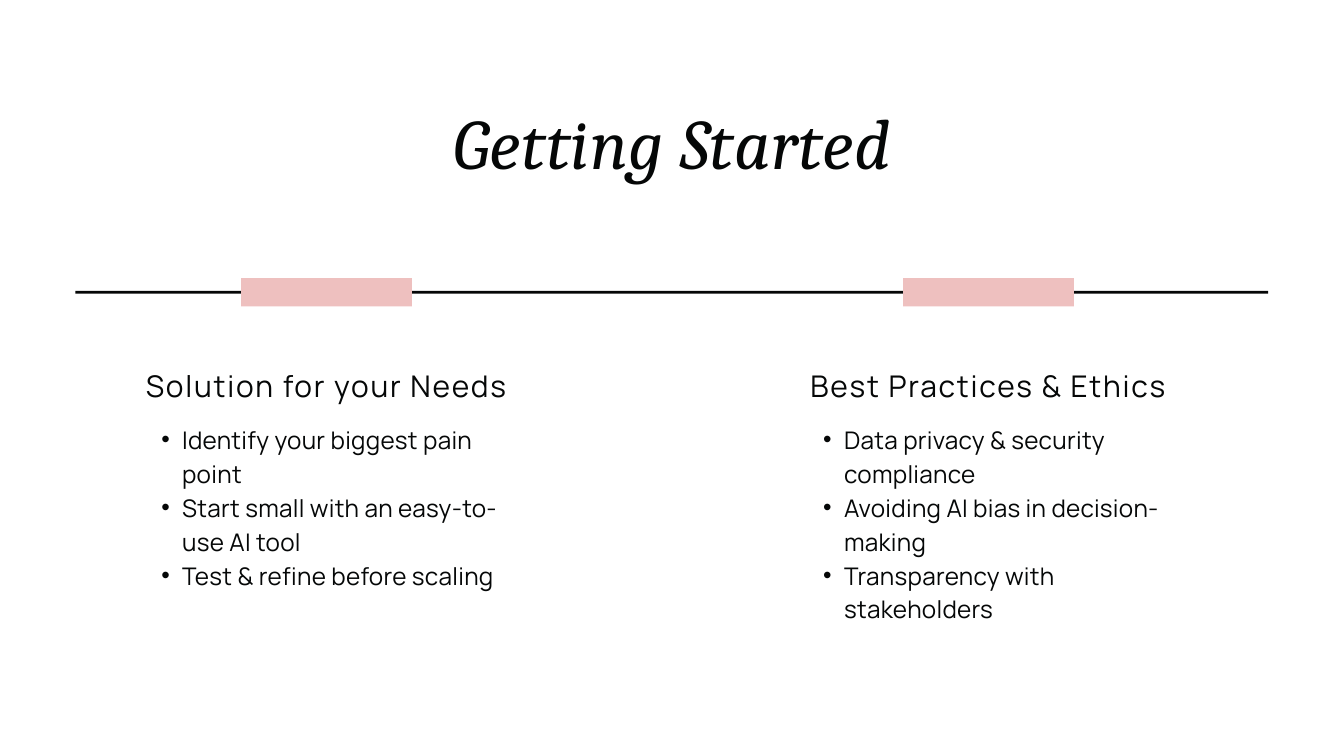
from lxml import etree
from pptx import Presentation
from pptx.dml.color import RGBColor
from pptx.enum.shapes import MSO_SHAPE
from pptx.enum.text import MSO_ANCHOR, MSO_AUTO_SIZE, PP_ALIGN
from pptx.oxml.ns import qn
from pptx.util import Pt

RECTANGLE = MSO_SHAPE.RECTANGLE
TOP = MSO_ANCHOR.TOP
NO_FIT = MSO_AUTO_SIZE.NONE
LEFT, CENTER = PP_ALIGN.LEFT, PP_ALIGN.CENTER

PX = 9144  # 100 px to the inch
INK, PINK = "050707", "EEC0BF"
COMPARISON_LAYOUT = 5 - 1


def add_bar(left, top, width, height, color):
    bar = page.shapes.add_shape(RECTANGLE, left * PX, top * PX, width * PX, height * PX)
    bar.shadow.inherit = False
    bar.fill.solid()
    bar.fill.fore_color.rgb = RGBColor.from_string(color)
    bar.line.fill.background()


def fill_text(box, place, lines, font, size, leading, tracking, italic=False, bullets=False):
    box.left, box.top, box.width, box.height = [length * PX for length in place]
    frame = box.text_frame
    frame.margin_left = frame.margin_top = frame.margin_right = frame.margin_bottom = 0
    frame.word_wrap = True
    frame.auto_size = NO_FIT
    frame.vertical_anchor = TOP
    for number, line in enumerate(lines):
        para = frame.add_paragraph() if number else frame.paragraphs[0]
        para.alignment = LEFT if bullets else CENTER
        para.line_spacing = Pt(leading)
        para.space_before = Pt(0)
        if bullets:
            para.level = 1
            props = para._p.get_or_add_pPr()
            props.set("marL", str(61 * PX))
            props.set("indent", str(-31 * PX))
            etree.SubElement(props, qn("a:buFont")).set("typeface", "Arial")
            etree.SubElement(props, qn("a:buChar")).set("char", "•")
        para.font.name = font
        para.font.size = Pt(size)
        para.font.bold = False
        para.font.italic = italic
        para.font.color.rgb = RGBColor.from_string(INK)
        span = para.add_run()
        span.text = line
        span._r.get_or_add_rPr().set("spc", str(tracking))


deck = Presentation()
deck.slide_width, deck.slide_height = 2000 * PX, 1125 * PX
page = deck.slides.add_slide(deck.slide_layouts[COMPARISON_LAYOUT])

# Title
fill_text(page.shapes.title, (229, 146, 1543, 126), ["Getting Started"],
          "Cambria", 76, 91.2, 80, italic=True)

# Horizontal rule
add_bar(112, 433, 1775, 4, INK)

# Two columns: heading, list and pink marker on the rule
columns = [
    ("Solution for your Needs",
     ["Identify your biggest pain point",
      "Start small with an easy-to-use AI tool",
      "Test & refine before scaling"]),
    ("Best Practices & Ethics",
     ["Data privacy & security compliance",
      "Avoiding AI bias in decision-making",
      "Transparency with stakeholders"]),
]
for column, (heading, points) in enumerate(columns):
    left = 210 + 985 * column
    heading_box = page.placeholders[1 + 2 * column]
    list_box = page.placeholders[2 + 2 * column]
    fill_text(heading_box, (left, 538, 551, 58), [heading], "Manrope", 32, 44.8, 190)
    fill_text(list_box, (left, 625, 551, 297), points, "Manrope", 26, 36.4, 30, bullets=True)
    add_bar(left + 149, 414, 254, 42, PINK)

deck.save("out.pptx")
